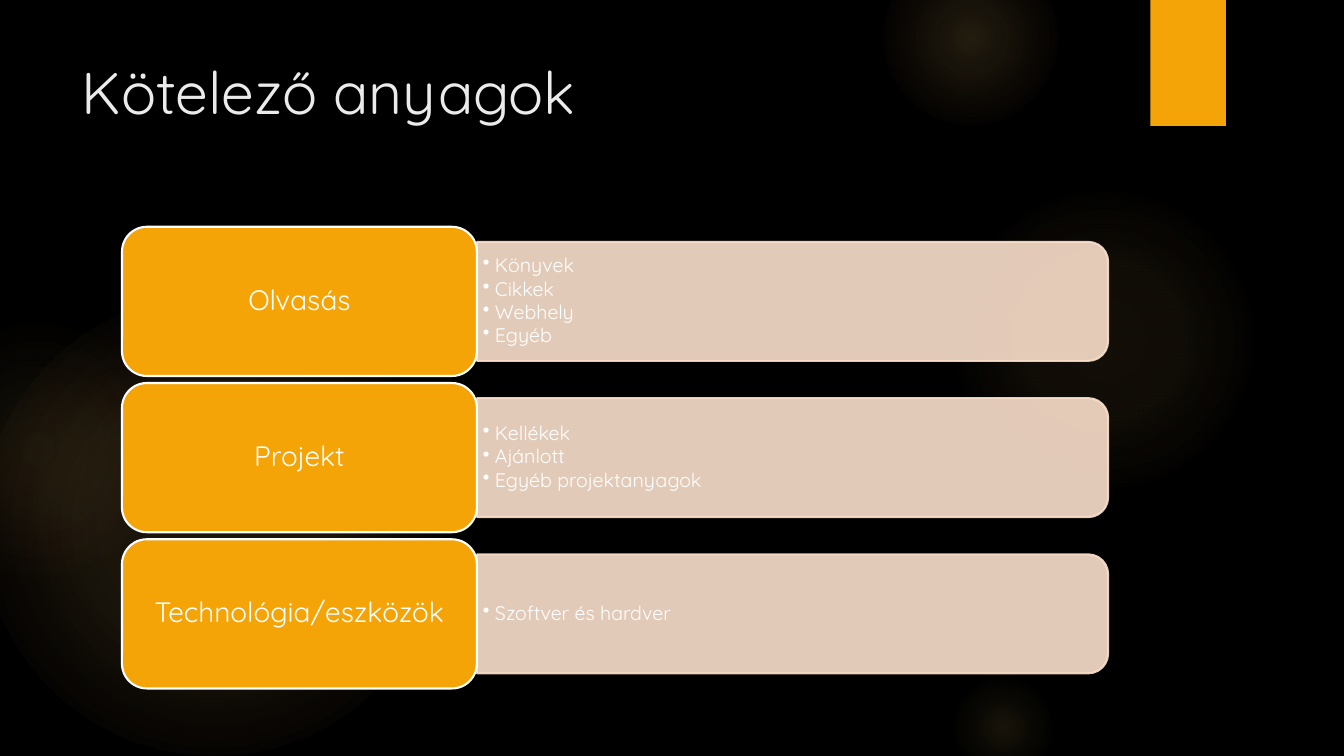
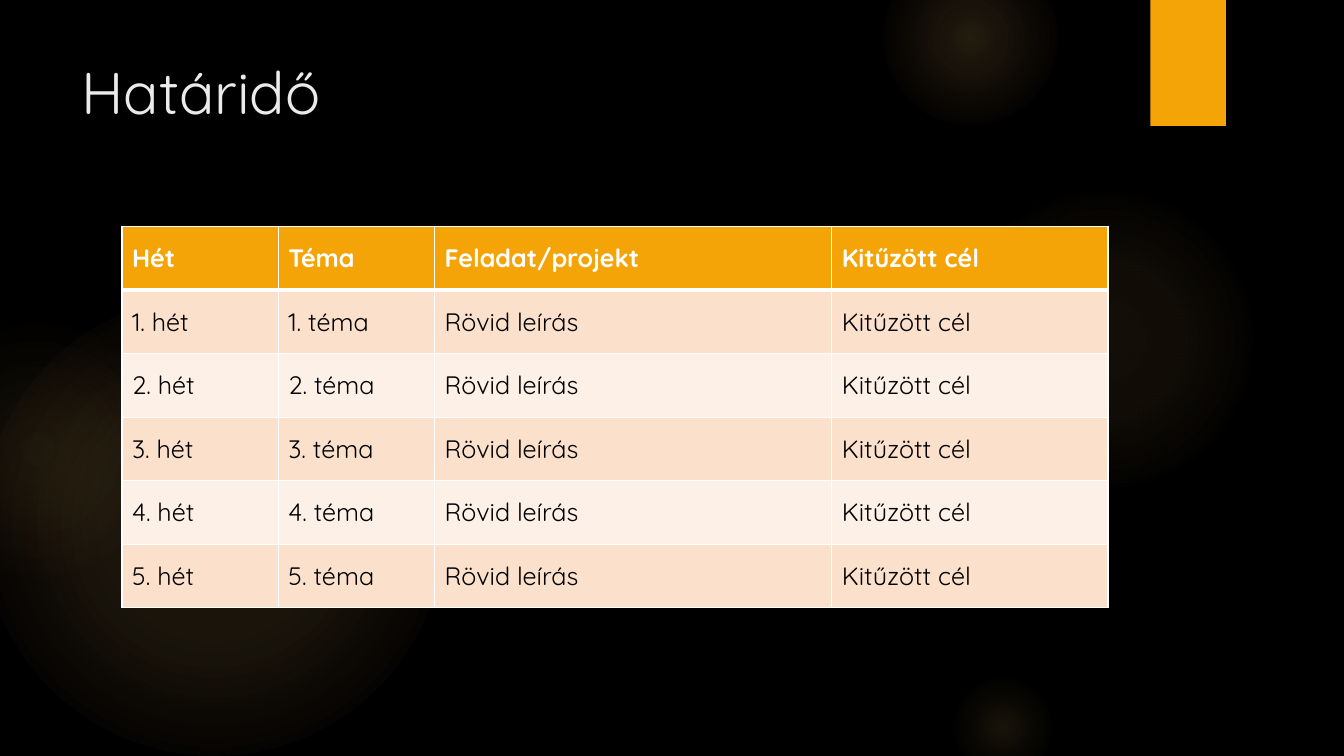
import pptx
import pptx.dml.color
import pptx.enum.shapes
import pptx.enum.text
import pptx.oxml
import pptx.oxml.ns
import pptx.util

Inch, Pt = pptx.util.Inches, pptx.util.Pt
Kind = pptx.enum.shapes.MSO_SHAPE
Align = pptx.enum.text.PP_ALIGN
Anchor = pptx.enum.text.MSO_ANCHOR
qn = pptx.oxml.ns.qn

THEME = {
    "font": "Quicksand",
    "back": "000000", "gold": "F5A408", "peach": "FBE0CC", "pale": "FDF0E7",
    "white": "FFFFFF", "title": "EBEBEB", "dark": "000000",
    "glow": "FAC96A", "ember": "F59B74",
    "title_pt": 42, "label_pt": 20, "table_pt": 18, "item_pt": 14,
}

WIDE, HIGH = 13.33, 7.5
LEFT, TOP, SPAN = 1.21, 2.25, 9.78

# left, top, size, then gradient stops: percent, colour, opacity
GLOWS = [
    (-0.17, 2.92, 4.58, [(0, "glow", 11), (36, "glow", 10), (75, "glow", 0)]),
    (-0.92, 3.17, 2.58, [(0, "glow", 8), (36, "glow", 5), (71, "ember", 0)]),
    (9.41, 1.83, 3.08, [(0, "glow", 7), (36, "glow", 6), (69, "glow", 0)]),
    (8.75, -0.5, 1.75, [(0, "glow", 14), (36, "glow", 7), (73, "glow", 0)]),
    (9.41, 6.67, 1.08, [(0, "glow", 10), (31, "glow", 5), (66, "glow", 0)]),
]
RIBBON = (11.41, 0, 0.75, 1.25)

GROUPS = [
    ("Olvasás", ["Könyvek", "Cikkek", "Webhely", "Egyéb"]),
    ("Projekt", ["Kellékek", "Ajánlott", "Egyéb projektanyagok"]),
    ("Technológia/eszközök", ["Szoftver és hardver"]),
]

WEEKS = 5
PLAN = [("Hét", "Téma", "Feladat/projekt", "Kitűzött cél")] + [
    (f"{n}. hét", f"{n}. téma", "Rövid leírás", "Kitűzött cél")
    for n in range(1, WEEKS + 1)
]
COLS = [1.55, 1.55, 3.94, 2.74]
ROW = 0.63


def tint(name):
    return pptx.dml.color.RGBColor.from_string(THEME[name])


def node(tag, inner="", **attrs):
    """Make one element of the drawing namespace."""
    pairs = "".join(f' {key}="{val}"' for key, val in attrs.items())
    return pptx.oxml.parse_xml(
        f"<a:{tag} {pptx.oxml.ns.nsdecls('a')}{pairs}>{inner}</a:{tag}>")


def style(part, **form):
    for key, val in form.items():
        setattr(part, key, val)


def draw(slide, kind, box, fill=None, line=None):
    shape = slide.shapes.add_shape(kind, *map(Inch, box))
    shape.shadow.inherit = False
    if fill:
        shape.fill.solid()
        shape.fill.fore_color.rgb = tint(fill)
    else:
        shape.fill.background()
    if line:
        shape.line.color.rgb = tint(line)
        shape.line.width = Pt(1.5)
    else:
        shape.line.fill.background()
    return shape


def glow(slide, left, top, size, stops):
    shape = draw(slide, Kind.OVAL, (left, top, size, size))
    marks = "".join(
        f'<a:gs pos="{pos * 1000}"><a:srgbClr val="{THEME[name]}">'
        f'<a:alpha val="{alpha * 1000}"/></a:srgbClr></a:gs>'
        for pos, name, alpha in stops)
    blend = node("gradFill", f'<a:gsLst>{marks}</a:gsLst><a:path path="circle">'
                 '<a:fillToRect l="50000" t="50000" r="50000" b="50000"/></a:path>',
                 rotWithShape=1)
    props = shape._element.spPr
    props.replace(props.find(qn("a:noFill")), blend)


def fade(shape, share):
    """Set the opacity of fill and line, in percent."""
    for mark in list(shape._element.spPr.iter(qn("a:srgbClr"))):
        mark.append(node("alpha", val=share * 1000))


def write(frame, lines, size, color, bold=False, **form):
    """Fill a text frame with paragraphs that share one format."""
    for spot, line in enumerate(lines):
        para = frame.add_paragraph() if spot else frame.paragraphs[0]
        style(para, **form)
        run = para.add_run()
        run.text = line
        style(run.font, name=THEME["font"], size=Pt(THEME[size]), bold=bold)
        run.font.color.rgb = tint(color)


def inset(frame, side, edge):
    style(frame, word_wrap=True, margin_left=Inch(side), margin_right=Inch(side),
          margin_top=Inch(edge), margin_bottom=Inch(edge))


def page(deck, title):
    """Add a slide with the shared decor and its title."""
    slide = deck.slides.add_slide(deck.slide_layouts[6])
    for spec_row in GLOWS:
        glow(slide, *spec_row)
    draw(slide, Kind.RECTANGLE, RIBBON, "gold")
    frame = slide.shapes.add_textbox(*map(Inch, (0.71, 0.5, 10.29, 1.53))).text_frame
    frame.word_wrap = True
    write(frame, [title], "title_pt", "title")
    return slide


def groups(slide):
    label, tall, pitch, thick = 3.52, 1.48, 1.55, 1.18
    long = SPAN - label
    start = LEFT + label
    for spot, (name, items) in enumerate(GROUPS):
        top = TOP + spot * pitch
        mid = top + tall / 2
        bar = draw(slide, Kind.ROUND_2_SAME_RECTANGLE,
                   (start + (long - thick) / 2, mid - long / 2, thick, long),
                   "peach", "peach")
        bar.rotation = 90
        fade(bar, 90)

        box = (start, mid - 1.07 / 2, long - 0.06, 1.07)
        frame = slide.shapes.add_textbox(*map(Inch, box)).text_frame
        inset(frame, 0.06, 0.03)
        frame.vertical_anchor = Anchor.MIDDLE
        write(frame, items, "item_pt", "white", line_spacing=0.9, space_after=Pt(1.5))
        for para in frame.paragraphs:
            props = para._p.get_or_add_pPr()
            props.set("marL", str(Inch(0.12)))
            props.set("indent", str(-Inch(0.12)))
            props.append(node("buChar", char="•"))

        tile = draw(slide, Kind.ROUNDED_RECTANGLE, (LEFT, top, label, tall),
                    "gold", "white")
        inset(tile.text_frame, 0.15, 0.1)
        tile.text_frame.vertical_anchor = Anchor.MIDDLE
        write(tile.text_frame, [name], "label_pt", "white",
              alignment=Align.CENTER, line_spacing=0.9)


def border(cell, **sides):
    """Draw white cell borders; each side gives its width in points."""
    props = cell._tc.get_or_add_tcPr()
    paint = f'<a:solidFill><a:srgbClr val="{THEME["white"]}"/></a:solidFill>'
    for spot, side in enumerate("LRTB"):
        props.insert(spot, node(f"ln{side}", paint, w=Pt(sides.get(side, 1))))


def table(slide):
    box = (LEFT, TOP, SPAN, ROW * len(PLAN))
    grid = slide.shapes.add_table(len(PLAN), len(COLS), *map(Inch, box)).table
    for col, width in zip(grid.columns, COLS):
        col.width = Inch(width)
    for r, texts in enumerate(PLAN):
        grid.rows[r].height = Inch(ROW)
        head = r == 0
        fill = "gold" if head else "peach" if r % 2 else "pale"
        for c, text in enumerate(texts):
            cell = grid.cell(r, c)
            cell.vertical_anchor = Anchor.MIDDLE
            cell.fill.solid()
            cell.fill.fore_color.rgb = tint(fill)
            border(cell, B=3 if head else 1, T=3 if r == 1 else 1)
            write(cell.text_frame, [text], "table_pt",
                  "white" if head else "dark", bold=head)


def main():
    deck = pptx.Presentation()
    style(deck, slide_width=Inch(WIDE), slide_height=Inch(HIGH))
    back = deck.slide_master.background.fill
    back.solid()
    back.fore_color.rgb = tint("back")
    groups(page(deck, "Kötelező anyagok"))
    table(page(deck, "Határidő"))
    deck.save("out.pptx")


if __name__ == "__main__":
    main()
